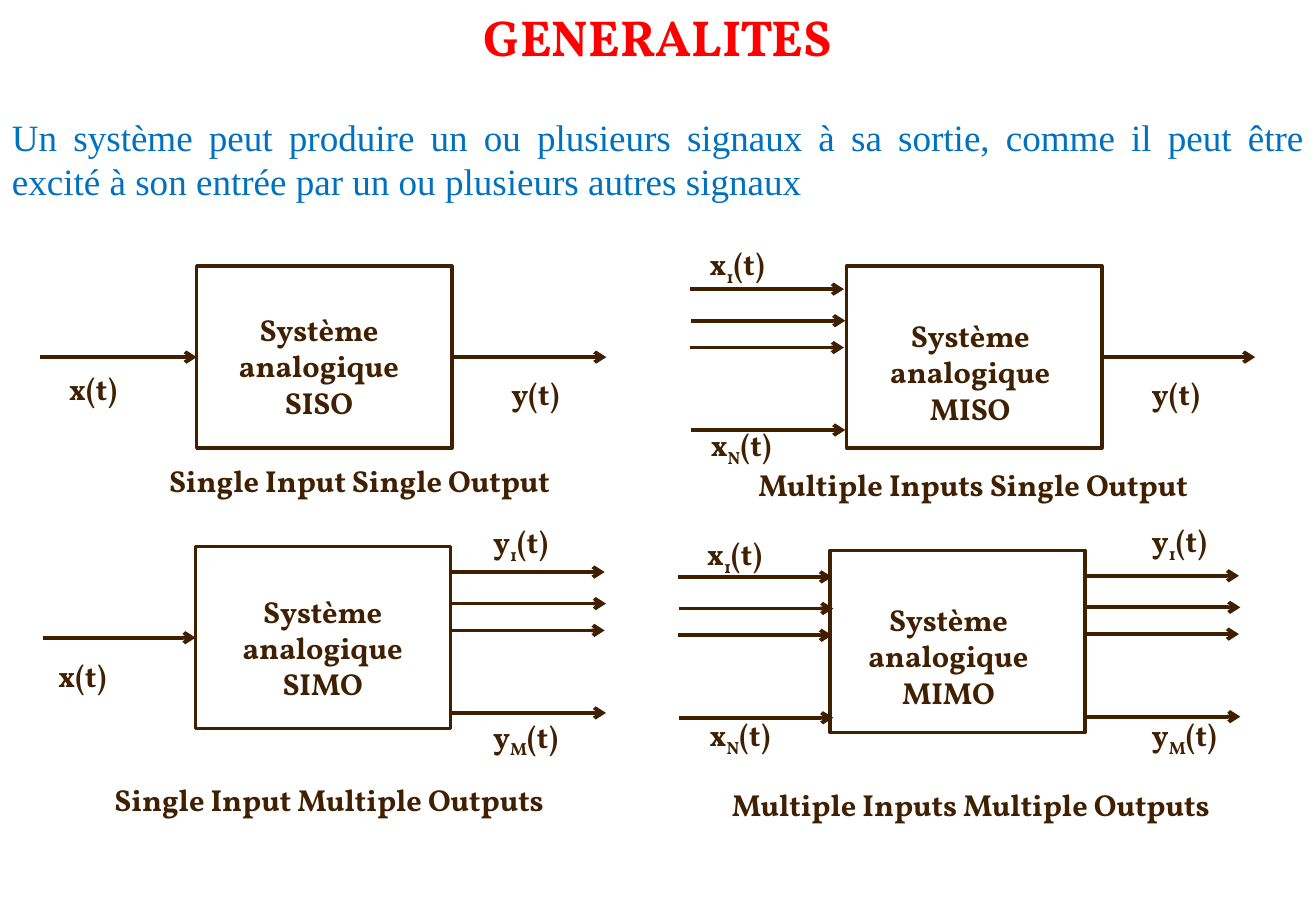
from lxml.etree import SubElement
from pptx import Presentation
from pptx.dml.color import RGBColor
from pptx.enum.shapes import MSO_CONNECTOR as Connector, MSO_SHAPE as Shape
from pptx.enum.text import MSO_AUTO_SIZE as AutoSize, PP_ALIGN as Align
from pptx.oxml.ns import qn
from pptx.util import Pt

TITLE = "GENERALITES"
INTRO = ("Un système peut produire un ou plusieurs signaux à sa sortie, comme il peut être "
         "excité à son entrée par un ou plusieurs autres signaux")
SYSTEMS = [
    {"name": "SISO", "caption": "Single Input Single Output",
     "box": (116.6, 157.7), "name_at": (126, 180.7), "caption_at": (36.7, 270.7),
     "input": 23.8, "output": 359.3,
     "labels": [("x", "", 33.8, 216), ("y", "", 295.9, 218.9)]},
    {"name": "MISO", "caption": "Multiple Inputs Single Output",
     "box": (501.8, 157.7), "name_at": (511.9, 184.3), "caption_at": (400.3, 272.9),
     "output": 743.8, "bundles": [(408.9, 171.4)],
     "labels": [("x", "1", 413.3, 141.8), ("x", "N", 414, 249.1), ("y", "", 675.4, 218.9)]},
    {"name": "SIMO", "caption": "Single Input Multiple Outputs",
     "box": (115.9, 324), "name_at": (128.2, 347.8), "caption_at": (18.7, 459.4),
     "input": 25.2, "bundles": [(267.1, 339.1)],
     "labels": [("x", "", 27.4, 385.9), ("y", "1", 285.1, 306.7), ("y", "M", 285.1, 421.9)]},
    {"name": "MIMO", "caption": "Multiple Inputs Multiple Outputs",
     "box": (491.8, 326.2), "name_at": (499, 352.8), "caption_at": (398.9, 462.2),
     "bundles": [(401.8, 342), (643, 341.3)],
     "labels": [("x", "1", 411.8, 313.9), ("x", "N", 413.3, 421.2),
                ("y", "1", 675.4, 306), ("y", "M", 675.4, 421.2)]},
]

SLIDE_WIDTH, SLIDE_HEIGHT = 779.8, 540
BOX_WIDTH, BOX_HEIGHT = 151.2, 108
ARROW_LENGTH = 91.2
BUNDLE_STEPS = [(0, 0), (0.8, 18.7), (0, 34.6), (0.8, 83.5)]
LEFT_SIDE, RIGHT_SIDE = 1, 3

THEME = {
    "arrow": RGBColor(0x3F, 0x1F, 0x00), "arrow_width": 2.25,
    "outline": RGBColor(0x40, 0x20, 0x00), "outline_width": 2,
    "title": {"name": "Vollkorn", "size": Pt(30), "bold": True, "color": RGBColor(0xFF, 0, 0)},
    "intro": {"name": "Times New Roman", "size": Pt(22), "bold": False,
              "color": RGBColor(0, 0x70, 0xC0)},
    "label": {"name": "Vollkorn", "size": Pt(18), "bold": True,
              "color": RGBColor(0x40, 0x20, 0x00)},
}


def add_text(slide, left, top, width, height, paragraphs, style, align):
    box = slide.shapes.add_textbox(Pt(left), Pt(top), Pt(width), Pt(height))
    frame = box.text_frame
    frame.word_wrap = True
    frame.auto_size = AutoSize.SHAPE_TO_FIT_TEXT
    for index, spans in enumerate(paragraphs):
        para = frame.paragraphs[0] if index == 0 else frame.add_paragraph()
        para.alignment = align
        for text, baseline in spans:
            span = para.add_run()
            span.text = text
            for key, value in THEME[style].items():
                if key == "color":
                    span.font.color.rgb = value
                else:
                    setattr(span.font, key, value)
            if baseline:
                span.font._element.set("baseline", str(baseline))


def add_arrow(slide, start, end, y):
    arrow = slide.shapes.add_connector(Connector.STRAIGHT, Pt(start), Pt(y), Pt(end), Pt(y))
    arrow.line.color.rgb = THEME["arrow"]
    arrow.line.width = Pt(THEME["arrow_width"])
    SubElement(arrow.line._get_or_add_ln(), qn("a:tailEnd"), type="arrow")
    SubElement(arrow._element.spPr, qn("a:effectLst"))
    return arrow


def add_system(slide, system):
    left, top = system["box"]
    right, middle = left + BOX_WIDTH, top + BOX_HEIGHT / 2
    box = slide.shapes.add_shape(Shape.RECTANGLE, Pt(left), Pt(top), Pt(BOX_WIDTH), Pt(BOX_HEIGHT))
    box.shadow.inherit = False
    box.fill.background()
    box.line.color.rgb = THEME["outline"]
    box.line.width = Pt(THEME["outline_width"])

    if "input" in system:
        add_arrow(slide, system["input"], left, middle).end_connect(box, LEFT_SIDE)
    if "output" in system:
        add_arrow(slide, right, system["output"], middle).begin_connect(box, RIGHT_SIDE)
    for start, first in system.get("bundles", []):
        for shift, drop in BUNDLE_STEPS:
            add_arrow(slide, start + shift, start + shift + ARROW_LENGTH, first + drop)

    add_text(slide, *system["name_at"], 126, 72.7,
             [[("Système analogique", 0)], [(system["name"], 0)]], "label", Align.CENTER)
    add_text(slide, *system["caption_at"], 352.8, 28.8,
             [[(system["caption"], 0)]], "label", Align.CENTER)
    for signal, index, label_left, label_top in system["labels"]:
        spans = [(signal, 0), (index, -25000), ("(t)", 0)] if index else [(f"{signal}(t)", 0)]
        add_text(slide, label_left, label_top, 72, 28.8, [spans], "label", Align.LEFT)


def main():
    deck = Presentation()
    deck.slide_width, deck.slide_height = Pt(SLIDE_WIDTH), Pt(SLIDE_HEIGHT)
    slide = deck.slides.add_slide(deck.slide_layouts[6])
    for system in SYSTEMS:
        add_system(slide, system)
    add_text(slide, 0, 64.1, SLIDE_WIDTH, 60.5, [[(INTRO, 0)]], "intro", Align.JUSTIFY)
    add_text(slide, 0, 0, SLIDE_WIDTH, 43.9, [[(TITLE, 0)]], "title", Align.CENTER)
    deck.save("out.pptx")


if __name__ == "__main__":
    main()
